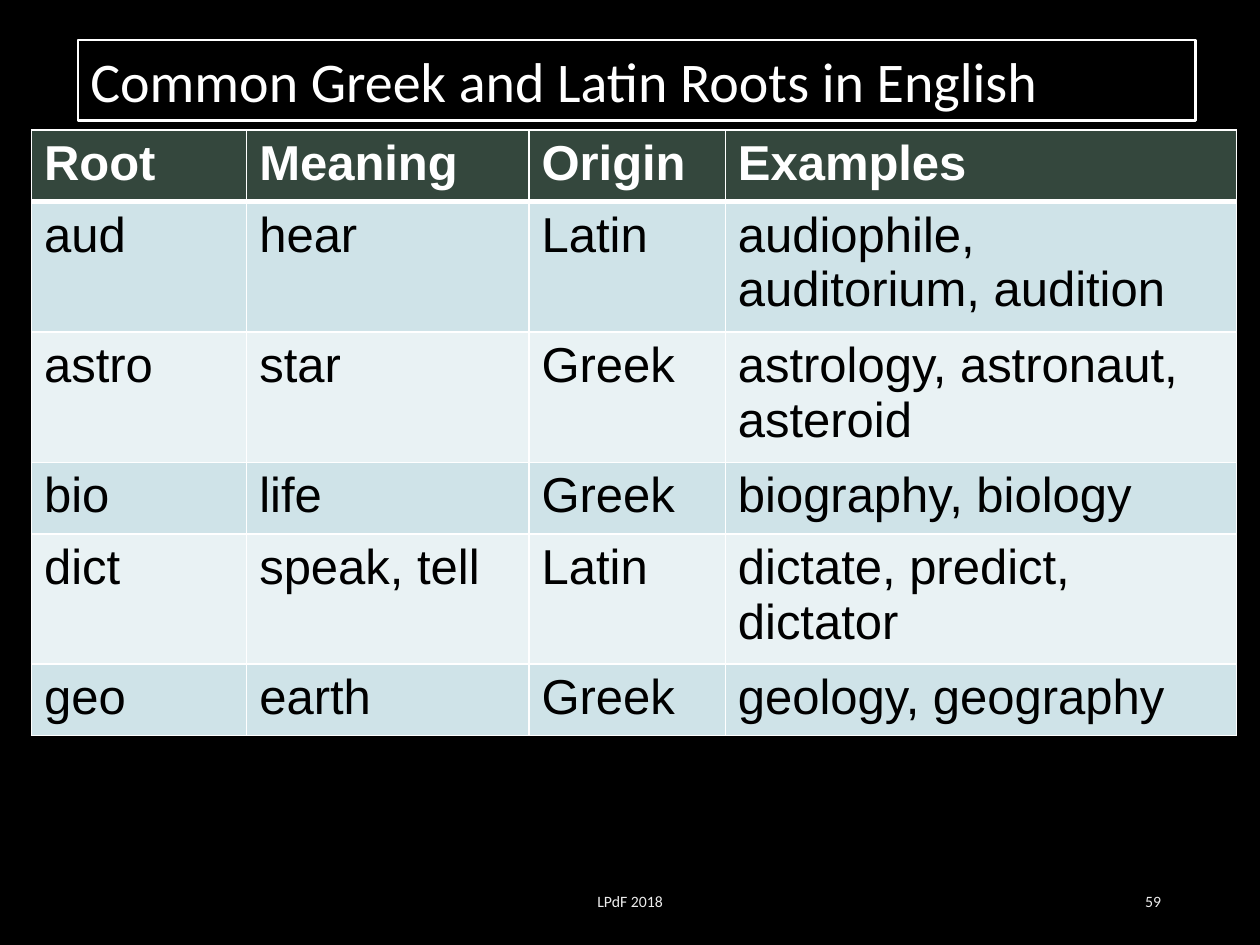
"""Build a slide with a table of common Greek and Latin roots."""
from lxml import etree
from pptx import Presentation
from pptx import util as u
from pptx.dml.color import RGBColor
from pptx.enum import shapes, text
from pptx.oxml import ns

TITLE = "Common Greek and Latin Roots in English"
ROWS = [
    ("Root", "Meaning", "Origin", "Examples"),
    ("aud", "hear", "Latin", "audiophile, auditorium, audition"),
    ("astro", "star", "Greek", "astrology, astronaut, asteroid"),
    ("bio", "life", "Greek", "biography, biology"),
    ("dict", "speak, tell", "Latin", "dictate, predict, dictator"),
    ("geo", "earth", "Greek", "geology, geography"),
]
WIDTHS = [123, 161.3, 112.2, 292]
ONE, TWO = 40.8, 74.4
HEIGHTS = [ONE, TWO, TWO, ONE, TWO, ONE]
FOOT = [
    ("LPdF 2018", 238.5, 243, text.PP_ALIGN.CENTER),
    ("59", 508.5, 162, text.PP_ALIGN.RIGHT),
]
HUES = {"back": "000000", "white": "FFFFFF", "ink": "000000", "head": "34473D",
        "odd": "CFE3E8", "even": "E9F2F4", "foot": "EDEDED"}


def hue(name):
    return RGBColor.from_string(HUES[name])


def write(frame, words, size, font="Calibri", color="white", bold=False,
          align=text.PP_ALIGN.LEFT, anchor=text.MSO_ANCHOR.TOP):
    frame.word_wrap = True
    frame.vertical_anchor = anchor
    para = frame.paragraphs[0]
    para.alignment = align
    run = para.add_run()
    run.text = words
    run.font.size, run.font.name, run.font.bold = u.Pt(size), font, bold
    run.font.color.rgb = hue(color)


def edge(cell, head):
    props = cell._tc.get_or_add_tcPr()
    for side in "LRTB":
        wide = 3 if head and side == "B" else 1
        line = etree.SubElement(props, ns.qn("a:ln" + side), w=str(u.Pt(wide)))
        fill = etree.SubElement(line, ns.qn("a:solidFill"))
        etree.SubElement(fill, ns.qn("a:srgbClr"), val=HUES["white"])


def grid(slide):
    table = slide.shapes.add_table(
        len(ROWS), len(WIDTHS), u.Pt(18), u.Pt(74.4),
        u.Pt(sum(WIDTHS)), u.Pt(sum(HEIGHTS))).table
    for col, wide in zip(table.columns, WIDTHS):
        col.width = u.Pt(wide)
    for r, (row, high) in enumerate(zip(ROWS, HEIGHTS)):
        table.rows[r].height = u.Pt(high)
        head = r == 0
        for c, words in enumerate(row):
            cell = table.cell(r, c)
            edge(cell, head)
            cell.fill.solid()
            cell.fill.fore_color.rgb = hue("head" if head else "odd" if r % 2 else "even")
            write(cell.text_frame, words, 28, font="Arial", bold=head,
                  color="white" if head else "ink")
            cell.vertical_anchor = text.MSO_ANCHOR.TOP


def main():
    deck = Presentation()
    deck.slide_width, deck.slide_height = u.Pt(720), u.Pt(540)
    slide = deck.slides.add_slide(deck.slide_layouts[6])
    slide.background.fill.solid()
    slide.background.fill.fore_color.rgb = hue("back")

    title = slide.shapes.add_shape(
        shapes.MSO_SHAPE.RECTANGLE, u.Pt(44.6), u.Pt(23), u.Pt(638.6), u.Pt(46.1))
    title.shadow.inherit = False
    title.fill.background()
    title.line.color.rgb = hue("white")
    title.line.width = u.Pt(1.5)
    title.text_frame.auto_size = text.MSO_AUTO_SIZE.SHAPE_TO_FIT_TEXT
    write(title.text_frame, TITLE, 32)

    grid(slide)
    for words, left, wide, align in FOOT:
        box = slide.shapes.add_textbox(u.Pt(left), u.Pt(500.5), u.Pt(wide), u.Pt(28.8))
        write(box.text_frame, words, 9, color="foot", align=align,
              anchor=text.MSO_ANCHOR.MIDDLE)
    deck.save("out.pptx")


if __name__ == "__main__":
    main()
